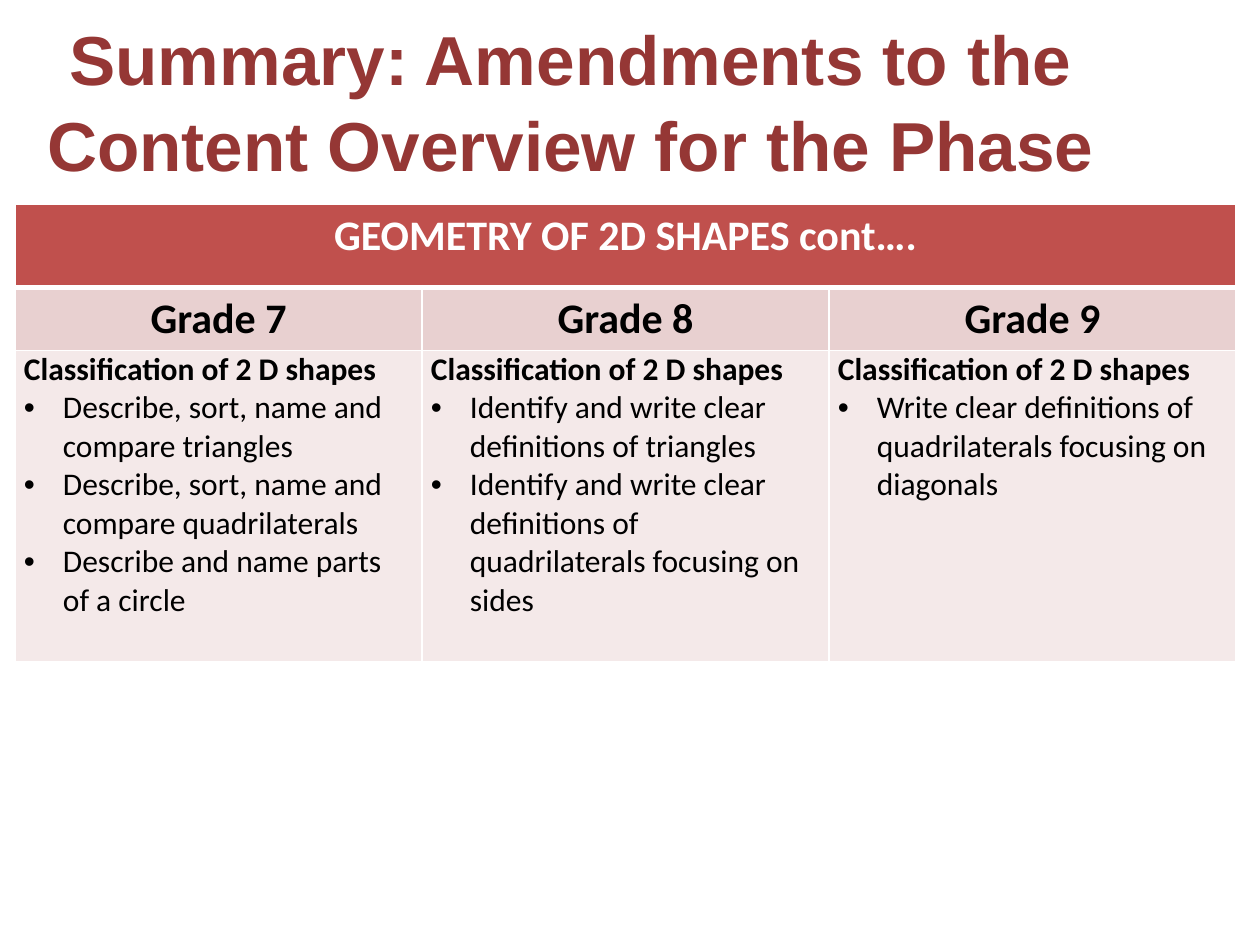
from lxml.etree import SubElement
from pptx import Presentation
from pptx.dml.color import RGBColor
from pptx.enum.text import MSO_ANCHOR, PP_ALIGN
from pptx.oxml.ns import qn
from pptx.util import Inches, Pt

WHITE = RGBColor(0xFF, 0xFF, 0xFF)
BLACK = RGBColor(0, 0, 0)
TITLE_RED = RGBColor(0x95, 0x37, 0x35)
HEADER_RED = RGBColor(0xC0, 0x50, 0x4D)
GRADE_PINK = RGBColor(0xE8, 0xD0, 0xD0)
TOPIC_PINK = RGBColor(0xF4, 0xE9, 0xE9)

TOPIC = "Classification of 2 D shapes"
GRADES = {
    "Grade 7": [
        "Describe, sort, name and compare triangles",
        "Describe, sort, name and compare quadrilaterals",
        "Describe and name parts of a circle",
    ],
    "Grade 8": [
        "Identify and write clear definitions of triangles",
        "Identify and write clear definitions of quadrilaterals focusing on sides",
    ],
    "Grade 9": ["Write clear definitions of quadrilaterals focusing on diagonals"],
}


class SlideBuilder:
    title_font = "Arial"
    table_font = "Calibri"
    column_width = Inches(3.23)
    row_heights = [Inches(0.66), Inches(0.49), Inches(2.47)]

    def __init__(self, presentation):
        self.slide = presentation.slides.add_slide(presentation.slide_layouts[6])

    def add_run(self, paragraph, text, font, size, color, bold=True):
        run = paragraph.add_run()
        run.text = text
        run.font.name = font
        run.font.size = Pt(size)
        run.font.bold = bold
        run.font.color.rgb = color

    def add_title(self, text):
        shape = self.slide.shapes.add_textbox(
            Inches(-0.12), Inches(0.13), Inches(9.3), Inches(1.32)
        )
        frame = shape.text_frame
        frame.word_wrap = True
        frame.vertical_anchor = MSO_ANCHOR.MIDDLE
        paragraph = frame.paragraphs[0]
        paragraph.alignment = PP_ALIGN.CENTER
        paragraph.line_spacing = 1.03
        self.add_run(paragraph, text, self.title_font, 39.6, TITLE_RED)

    def style_cell(self, cell, color, top=1, bottom=1):
        properties = cell._tc.get_or_add_tcPr()
        for side, width in (("L", 1), ("R", 1), ("T", top), ("B", bottom)):
            line = SubElement(properties, qn(f"a:ln{side}"), w=str(Pt(width)))
            fill = SubElement(line, qn("a:solidFill"))
            SubElement(fill, qn("a:srgbClr"), val=str(WHITE))
        cell.fill.solid()
        cell.fill.fore_color.rgb = color

    def add_heading(self, cell, text, color):
        paragraph = cell.text_frame.paragraphs[0]
        paragraph.alignment = PP_ALIGN.CENTER
        self.add_run(paragraph, text, self.table_font, 24, color)

    def add_topic(self, cell, heading, points):
        cell.margin_left = cell.margin_right = Inches(0.07)
        cell.margin_top = cell.margin_bottom = 0
        frame = cell.text_frame
        self.add_run(frame.paragraphs[0], heading, self.table_font, 18, BLACK)
        for point in points:
            paragraph = frame.add_paragraph()
            properties = paragraph._p.get_or_add_pPr()
            properties.set("marL", str(Inches(0.31)))
            properties.set("indent", str(-Inches(0.31)))
            SubElement(properties, qn("a:buFont"), typeface="Arial")
            SubElement(properties, qn("a:buChar"), char="•")
            self.add_run(paragraph, point, self.table_font, 18, BLACK, bold=False)

    def add_grade_table(self, heading, topic, grades):
        table = self.slide.shapes.add_table(
            len(self.row_heights), len(grades), Inches(0.12), Inches(1.62),
            self.column_width * len(grades), sum(self.row_heights),
        ).table
        for column in table.columns:
            column.width = self.column_width
        for row, height in zip(table.rows, self.row_heights):
            row.height = height
        for index, (grade, points) in enumerate(grades.items()):
            header, label, body = (table.cell(row, index) for row in range(3))
            self.style_cell(header, HEADER_RED, bottom=3)
            self.style_cell(label, GRADE_PINK, top=3)
            self.style_cell(body, TOPIC_PINK)
            self.add_heading(label, grade, BLACK)
            self.add_topic(body, topic, points)
        table.cell(0, 0).merge(table.cell(0, len(grades) - 1))
        self.add_heading(table.cell(0, 0), heading, WHITE)


def main():
    presentation = Presentation()
    presentation.slide_width = Inches(10)
    presentation.slide_height = Inches(7.5)
    builder = SlideBuilder(presentation)
    builder.add_title("Summary: Amendments to the Content Overview for the Phase")
    builder.add_grade_table("GEOMETRY OF 2D SHAPES cont….", TOPIC, GRADES)
    presentation.save("out.pptx")


if __name__ == "__main__":
    main()
